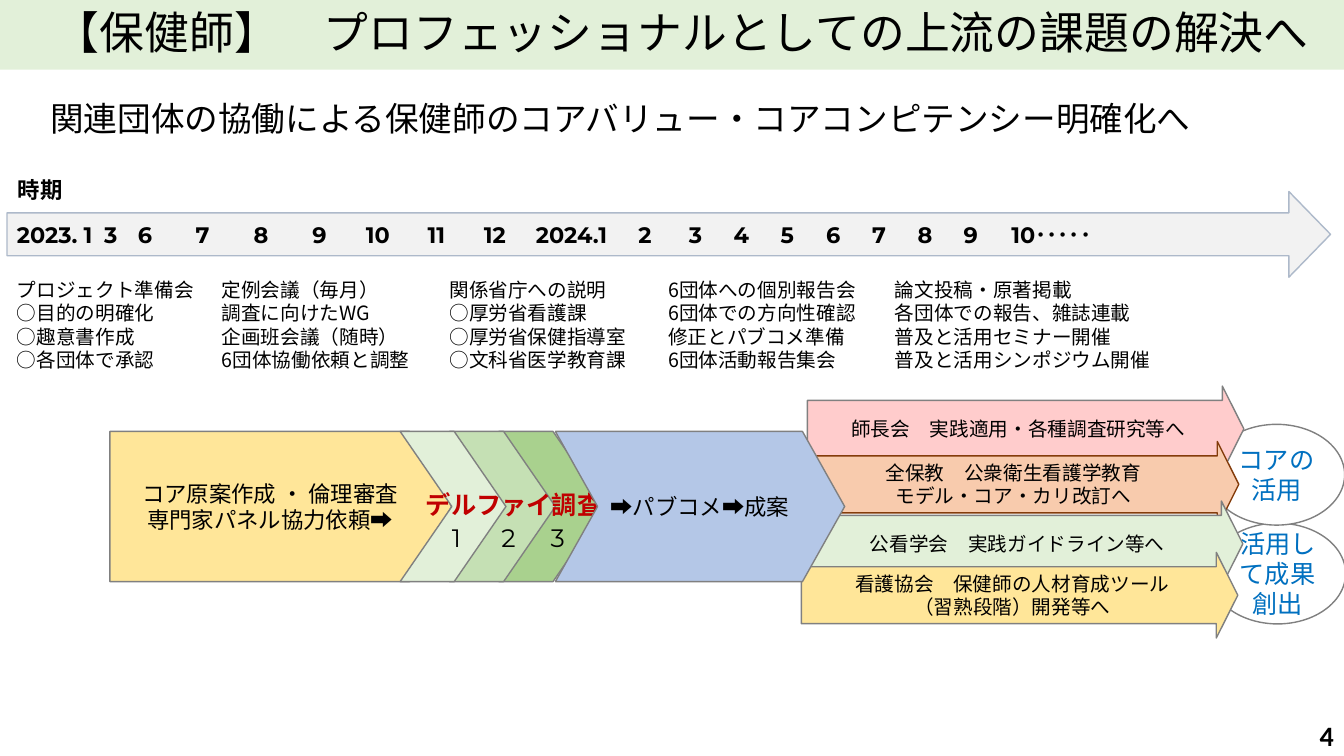
from lxml.etree import SubElement
from pptx import Presentation
from pptx.dml.color import RGBColor
from pptx.enum.shapes import MSO_SHAPE
from pptx.enum.text import MSO_ANCHOR, PP_ALIGN
from pptx.oxml.ns import qn
from pptx.util import Inches, Pt

BLACK = RGBColor(0x00, 0x00, 0x00)
WHITE = RGBColor(0xFF, 0xFF, 0xFF)
GRAY = RGBColor(0x80, 0x80, 0x80)
SILVER = RGBColor(0xF2, 0xF2, 0xF2)
STEEL = RGBColor(0xAD, 0xB9, 0xCA)
BLUE = RGBColor(0x00, 0x70, 0xC0)
SKY = RGBColor(0xB4, 0xC7, 0xE7)
RED = RGBColor(0xC0, 0x00, 0x00)
PINK = RGBColor(0xFF, 0xCC, 0xCC)
PEACH = RGBColor(0xF8, 0xCB, 0xAD)
BROWN = RGBColor(0x84, 0x3C, 0x0B)
GOLD = RGBColor(0xFF, 0xE6, 0x99)
MINT = RGBColor(0xE2, 0xF0, 0xD9)
LEAF = RGBColor(0xC5, 0xE0, 0xB4)
GREEN = RGBColor(0xA9, 0xD1, 0x8E)
SANS = "Noto Sans CJK JP"
LATIN = "Montserrat"
LEFT, MID, RIGHT = PP_ALIGN.LEFT, PP_ALIGN.CENTER, PP_ALIGN.RIGHT

deck = Presentation()
deck.slide_width, deck.slide_height = Inches(13.33), Inches(7.5)
COL, ROW = deck.slide_width / 40, deck.slide_height / 30
slide = deck.slides.add_slide(deck.slide_layouts[6])


def write(shape, text, size, color=BLACK, font=SANS, bold=False, align=MID):
    frame = shape.text_frame
    frame.text = text
    frame.word_wrap = True
    frame.vertical_anchor = MSO_ANCHOR.MIDDLE
    for para in frame.paragraphs:
        para.alignment = align
        for run in para.runs:
            run.font.size, run.font.bold = Pt(size), bold
            run.font.name, run.font.color.rgb = font, color
            east = SubElement(run.font._element, qn("a:ea"))
            east.set("typeface", font)


def place(kind, x, y, w, h, fill=None, line=None, adjust=()):
    """Add a preset shape, or a text box if kind is None, in grid units."""
    box = [round(x * COL), round(y * ROW), round(w * COL), round(h * ROW)]
    if kind is None:
        return slide.shapes.add_textbox(*box)
    shape = slide.shapes.add_shape(kind, *box)
    shape.shadow.inherit = False
    for i, share in enumerate(adjust):
        shape.adjustments[i] = share
    if fill is None:
        shape.fill.background()
    else:
        shape.fill.solid()
        shape.fill.fore_color.rgb = fill
    if line is None:
        shape.line.fill.background()
    else:
        shape.line.color.rgb = line
        shape.line.width = Pt(1)
    return shape


# Goals at the right edge, and the headings
goals = [(36, 20.76, "活用して成果創出"), (35.97, 16.84, "コアの活用")]
for x, y, text in goals:
    goal = place(MSO_SHAPE.OVAL, x, y, 4.05, 4, WHITE, GRAY)
    write(goal, text, 18, BLUE)
    goal.text_frame.margin_left = goal.text_frame.margin_right = Inches(0.05)

title = place(MSO_SHAPE.RECTANGLE, 0, 0, 40, 2.76, MINT)
write(title, "\u3000【保健師】\u3000プロフェッショナルとしての上流の課題の解決へ".replace("\u3000", "　"),
      32, align=LEFT)
title.text_frame.paragraphs[0].line_spacing = 0.9
write(place(None, 1.2, 3.68, 34.53, 2),
      "関連団体の協働による保健師のコアバリュー・コアコンピテンシー明確化へ", 24, align=LEFT)

# Timeline: months stand on centred tab stops
write(place(None, 0.24, 6.8, 3.66, 1.48), "時期", 16, bold=True, align=LEFT)
months = ["2023. 1", "3", "6", "7", "8", "9", "10", "11", "12", "2024.1",
          "2", "3", "4", "5", "6", "7", "8", "9", "10･････"]
stops = [0.93, 1.27, *(1.84 + 0.58 * i for i in range(6)), 5.5, 6.23,
         *(6.73 + 0.455 * i for i in range(7)), 10.26]
years = place(MSO_SHAPE.RIGHT_ARROW, 0.21, 7.6, 39.39, 3.4, SILVER, STEEL, (0.5, 0.486))
write(years, "\t".join(months), 16, font=LATIN, bold=True, align=LEFT)
tabs = SubElement(years.text_frame.paragraphs[0]._p.get_or_add_pPr(), qn("a:tabLst"))
for stop in stops:
    SubElement(tabs, qn("a:tab"), pos=str(Inches(stop)), algn="ctr")

# Work done in each period
notes = [
    (0.21, 7.47, "プロジェクト準備会\n○目的の明確化\n○趣意書作成\n○各団体で承認"),
    (6.3, 7.47, "定例会議（毎月）\n調査に向けたWG\n企画班会議（随時）\n6団体協働依頼と調整"),
    (13.08, 7.47, "関係省庁への説明\n○厚労省看護課\n○厚労省保健指導室\n○文科省医学教育課"),
    (19.59, 7.47, "6団体への個別報告会\n6団体での方向性確認\n修正とパブコメ準備\n6団体活動報告集会"),
    (26.34, 9.39, "論文投稿・原著掲載\n各団体での報告、雑誌連載\n"
                  "普及と活用セミナー開催\n普及と活用シンポジウム開催"),
]
for x, w, text in notes:
    write(place(None, x, 10.96, w, 3.84), text, 14, align=LEFT)

# Process: draft, three survey rounds, public comment
TOP, TALL = 17.12, 5.96
draft = place(MSO_SHAPE.PENTAGON, 3.27, TOP, 10.17, TALL, GOLD, GRAY, (0.28,))
write(draft, "コア原案作成 ・ 倫理審査\n専門家パネル協力依頼➡", 16)
for turn, fill in [(3, GREEN), (2, LEAF), (1, MINT)]:
    x = 11.91 + 1.47 * (turn - 1)
    survey = place(MSO_SHAPE.CHEVRON, x, TOP, 3.15, TALL, fill, GRAY, (0.489,))
    write(survey, str(turn), 18, font=LATIN)
    survey.text_frame.margin_top = Inches(0.67)
label = place(MSO_SHAPE.FLOWCHART_TERMINATOR, 11.1, 18.92, 8.4, 2.16)
write(label, "デルファイ調査", 18, RED, bold=True)

# Uses by each body
uses = [
    (24.03, 15.32, PINK, GRAY, "師長会　実践適用・各種調査研究等へ"),
    (23.88, 17.52, PEACH, BROWN, "全保教　公衆衛生看護学教育\nモデル・コア・カリ改訂へ"),
    (24, 19.88, MINT, GRAY, "公看学会　実践ガイドライン等へ"),
    (23.85, 21.92, GOLD, GRAY, "看護協会　保健師の人材育成ツール\n（習熟段階）開発等へ"),
]
for x, y, fill, line, text in uses:
    write(place(MSO_SHAPE.RIGHT_ARROW, x, y, 12.99, 3.4, fill, line, (0.665, 0.251)), text, 14)
final = place(MSO_SHAPE.CHEVRON, 16.53, TOP, 8.61, TALL, SKY, GRAY, (0.281,))
write(final, "➡パブコメ➡成案", 16)

write(place(None, 37.98, 28.36, 2.01, 1.6), "4", 20, font="Calibri", bold=True, align=RIGHT)

deck.save("out.pptx")
